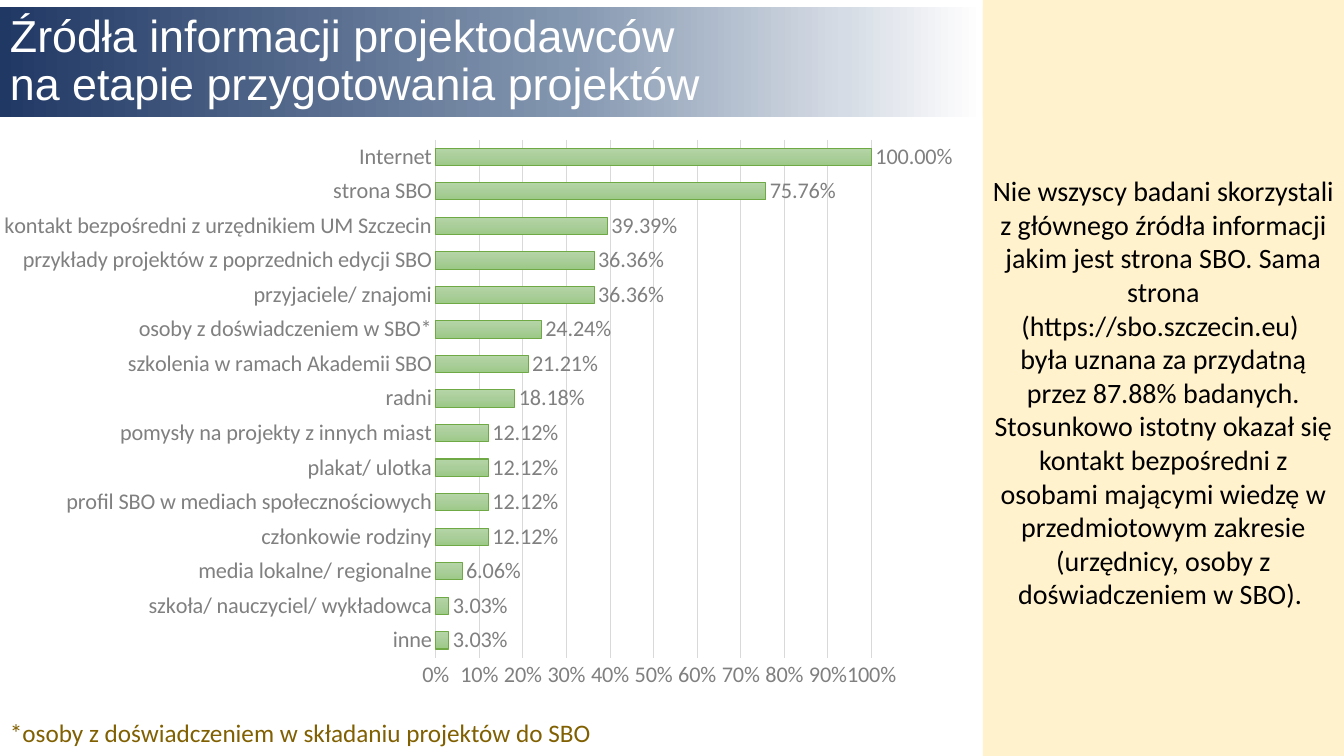
from lxml.etree import SubElement
from pptx import Presentation
from pptx.chart.data import CategoryChartData
from pptx.dml.color import RGBColor
from pptx.enum.chart import XL_CHART_TYPE, XL_LABEL_POSITION, XL_TICK_MARK
from pptx.enum.shapes import MSO_SHAPE
from pptx.enum.text import MSO_ANCHOR, PP_ALIGN
from pptx.oxml.ns import qn
from pptx.util import Pt

TITLE = ["Źródła informacji projektodawców ", "na etapie przygotowania projektów"]
COMMENTARY = [
    "Nie wszyscy badani skorzystali z głównego źródła informacji jakim jest "
    "strona SBO. Sama strona (https://sbo.szczecin.eu) ",
    "była uznana za przydatną przez 87.88% badanych. Stosunkowo istotny okazał "
    "się kontakt bezpośredni z osobami mającymi wiedzę w przedmiotowym zakresie "
    "(urzędnicy, osoby z doświadczeniem w SBO). ",
]
FOOTNOTE = "*osoby z doświadczeniem w składaniu projektów do SBO"
SOURCES = [
    ("inne", 0.0303),
    ("szkoła/ nauczyciel/ wykładowca", 0.0303),
    ("media lokalne/ regionalne", 0.0606),
    ("członkowie rodziny", 0.1212),
    ("profil SBO w mediach społecznościowych", 0.1212),
    ("plakat/ ulotka", 0.1212),
    ("pomysły na projekty z innych miast", 0.1212),
    ("radni", 0.1818),
    ("szkolenia w ramach Akademii SBO", 0.2121),
    ("osoby z doświadczeniem w SBO*", 0.2424),
    ("przyjaciele/ znajomi", 0.3636),
    ("przykłady projektów z poprzednich edycji SBO", 0.3636),
    ("kontakt bezpośredni z urzędnikiem UM Szczecin", 0.3939),
    ("strona SBO", 0.7576),
    ("Internet", 1),
]
COLORS = {
    "white": "FFFFFF", "black": "000000", "cream": "FFF2CC", "olive": "806000",
    "label": "808080", "grid": "D9D9D9", "bar_edge": "6EA945",
}
TITLE_GRADIENT = [(0, "203864"), (58, "8497B0"), (86, "D6DCE5"), (100, "FFFFFF")]
BAR_GRADIENT = [(0, "B5D5A7"), (50, "AACE9A"), (100, "9CC987")]
PLOT_LAYOUT = {"x": 0.46, "y": 0.02, "w": 0.46, "h": 0.905}

SLIDE_W, SLIDE_H = 960, 540
PANEL_LEFT = 702


def rgb(name):
    return RGBColor.from_string(COLORS[name])


def style_font(font, size, color, family="Calibri"):
    font.size = Pt(size)
    font.name = family
    font.color.rgb = rgb(color)


def add_run(paragraph, text, *style):
    run = paragraph.add_run()
    run.text = text
    style_font(run.font, *style)


def apply_gradient(fill, element, stops, angle):
    """Fill with any number of stops; angle is counter-clockwise degrees."""
    fill.gradient()
    fill.gradient_angle = angle
    stop_list = element.find(".//" + qn("a:gsLst"))
    for stop in list(stop_list):
        stop_list.remove(stop)
    for percent, color in stops:
        stop = SubElement(stop_list, qn("a:gs"), pos=str(percent * 1000))
        SubElement(stop, qn("a:srgbClr"), val=color)


def style_line(line, color):
    line.color.rgb = rgb(color)
    line.width = Pt(0.75)


def add_rectangle(slide, left, top, width, height):
    shape = slide.shapes.add_shape(
        MSO_SHAPE.RECTANGLE, Pt(left), Pt(top), Pt(width), Pt(height))
    shape.shadow.inherit = False
    shape.line.fill.background()
    shape.text_frame.word_wrap = True
    return shape


def add_title(slide):
    banner = add_rectangle(slide, 0, 5, PANEL_LEFT, 78.5)
    apply_gradient(banner.fill, banner._element, TITLE_GRADIENT, 0)
    banner.text_frame.vertical_anchor = MSO_ANCHOR.MIDDLE
    paragraph = banner.text_frame.paragraphs[0]
    paragraph.alignment = PP_ALIGN.LEFT
    paragraph.line_spacing = 0.9
    for index, line in enumerate(TITLE):
        if index:
            paragraph.add_line_break()
        add_run(paragraph, line, 32, "white", "Arial")


def add_commentary(slide):
    panel = add_rectangle(slide, PANEL_LEFT, 0, SLIDE_W - PANEL_LEFT, SLIDE_H)
    panel.fill.solid()
    panel.fill.fore_color.rgb = rgb("cream")
    frame = panel.text_frame
    frame.vertical_anchor = MSO_ANCHOR.TOP
    frame.margin_top = Pt(124)
    for index, text in enumerate(COMMENTARY):
        paragraph = frame.add_paragraph() if index else frame.paragraphs[0]
        paragraph.alignment = PP_ALIGN.CENTER
        add_run(paragraph, text, 20, "black")


def fix_plot_area(chart):
    """Set the inner plot area as fractions of the chart."""
    plot_area = chart._chartSpace.chart.plotArea
    layout = plot_area.find(qn("c:layout"))
    if layout is None:
        layout = SubElement(plot_area, qn("c:layout"))
        plot_area.insert(0, layout)
    manual = SubElement(layout, qn("c:manualLayout"))
    SubElement(manual, qn("c:layoutTarget"), val="inner")
    for side in "xy":
        SubElement(manual, qn(f"c:{side}Mode"), val="edge")
    for side, share in PLOT_LAYOUT.items():
        SubElement(manual, qn(f"c:{side}"), val=str(share))


def add_sources_chart(slide):
    data = CategoryChartData(number_format="0.00%")
    data.categories = [name for name, _ in SOURCES]
    data.add_series("Series 1", [share for _, share in SOURCES])
    chart = slide.shapes.add_chart(
        XL_CHART_TYPE.BAR_CLUSTERED, Pt(0), Pt(91.5), Pt(680.5), Pt(409), data).chart
    chart.has_legend = False
    chart.has_title = False
    style_font(chart.font, 16, "black")
    fix_plot_area(chart)

    for axis in (chart.category_axis, chart.value_axis):
        axis.major_tick_mark = axis.minor_tick_mark = XL_TICK_MARK.NONE
        style_font(axis.tick_labels.font, 16, "label")
    style_line(chart.category_axis.format.line, "grid")
    shares = chart.value_axis
    shares.minimum_scale, shares.maximum_scale, shares.major_unit = 0, 1, 0.1
    shares.format.line.fill.background()
    style_line(shares.major_gridlines.format.line, "grid")
    shares.tick_labels.number_format = "0%"
    shares.tick_labels.number_format_is_linked = False

    plot = chart.plots[0]
    plot.gap_width = 100
    plot.vary_by_categories = False
    bars = plot.series[0]
    apply_gradient(bars.format.fill, bars._element, BAR_GRADIENT, 270)
    style_line(bars.format.line, "bar_edge")
    labels = bars.data_labels
    labels.show_value = True
    labels.position = XL_LABEL_POSITION.OUTSIDE_END
    labels.number_format = "0.00%"
    labels.number_format_is_linked = False
    style_font(labels.font, 16, "label")


def add_footnote(slide):
    box = slide.shapes.add_textbox(Pt(0), Pt(507.5), Pt(490), Pt(29.5))
    box.text_frame.word_wrap = True
    paragraph = box.text_frame.paragraphs[0]
    paragraph.line_spacing = 1.07
    paragraph.space_after = Pt(8)
    add_run(paragraph, FOOTNOTE, 18, "olive")


def main():
    presentation = Presentation()
    presentation.slide_width, presentation.slide_height = Pt(SLIDE_W), Pt(SLIDE_H)
    slide = presentation.slides.add_slide(presentation.slide_layouts[6])
    add_title(slide)
    add_commentary(slide)
    add_sources_chart(slide)
    add_footnote(slide)
    presentation.save("out.pptx")


if __name__ == "__main__":
    main()
